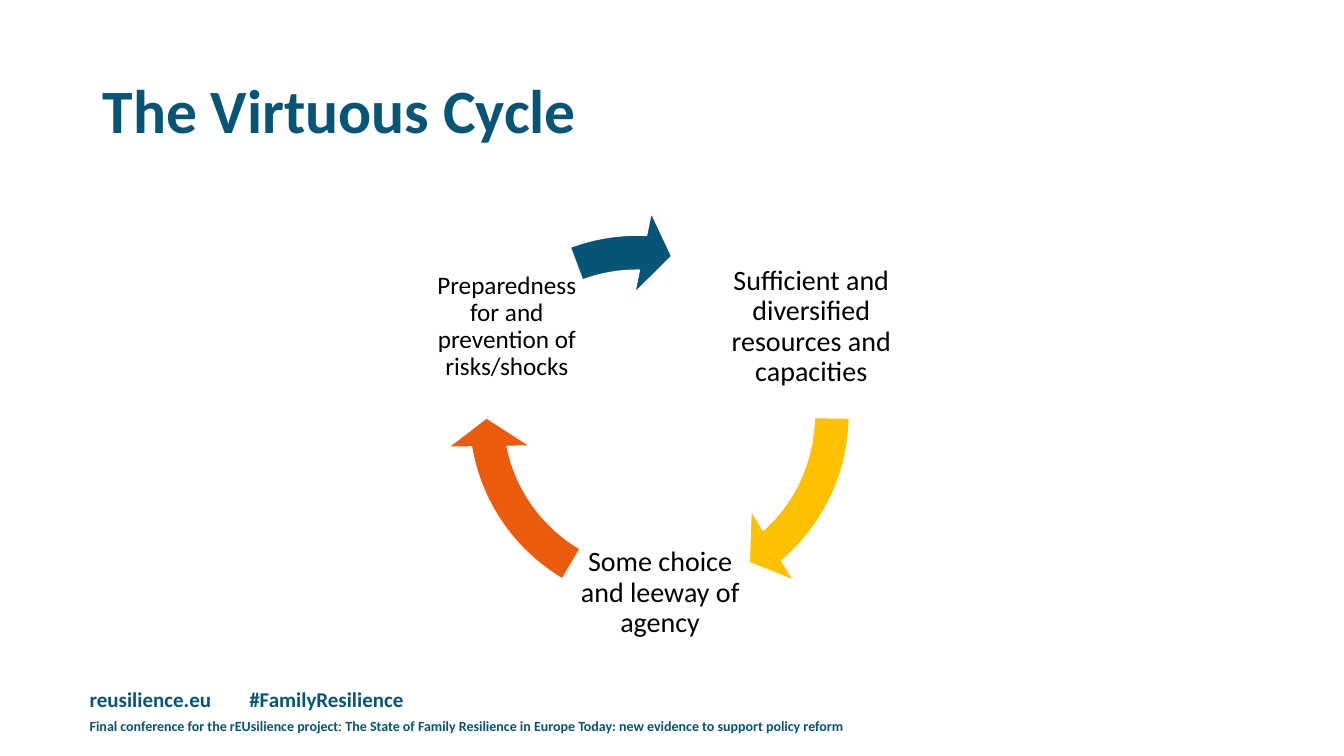
from pptx import Presentation
from pptx import util as u
from pptx.dml.color import RGBColor
from pptx.enum import shapes, text
from pptx.oxml import parse_xml
from pptx.oxml.ns import nsdecls

TEAL = RGBColor(0x06, 0x55, 0x76)
YELLOW = RGBColor(0xFF, 0xC0, 0x00)
ORANGE = RGBColor(0xEA, 0x5B, 0x0C)
BLACK = RGBColor(0, 0, 0)
WHITE = RGBColor(0xFF, 0xFF, 0xFF)

RING_SIZE = 305.3
NODE_INSET = 4

# Words, left, width, top, text size
NODES = [
    ("Sufficient and diversified resources and capacities", 496, 167, 169, 20),
    ("Some choice and leeway of agency", 407, 129, 359, 20),
    ("Preparedness for and prevention of risks/shocks", 297.5, 129, 169, 18),
]

# Colour, left, top, end angle, start angle (angles in units of 100000 / 60000 degrees)
ARROWS = [
    (YELLOW, 318.2, 144, 29.37, 0.52),
    (ORANGE, 318.2, 144, 101.72, 72.34),
    (TEAL, 302.4, 151.2, 163.19, 149.67),
]


def add_text_box(slide, left, top, width, height, anchor=text.MSO_ANCHOR.TOP):
    box = slide.shapes.add_textbox(u.Pt(left), u.Pt(top), u.Pt(width), u.Pt(height))
    frame = box.text_frame
    frame.word_wrap = True
    frame.vertical_anchor = anchor
    return frame


def add_run(paragraph, words, size, color=TEAL, bold=True, font="Calibri"):
    run = paragraph.add_run()
    run.text = words
    run.font.name = font
    run.font.size = u.Pt(size)
    run.font.bold = bold
    run.font.color.rgb = color


def add_tab_stop(paragraph, position):
    paragraph._p.get_or_add_pPr().append(parse_xml(
        f'<a:tabLst {nsdecls("a")}><a:tab pos="{u.Pt(position)}" algn="l"/></a:tabLst>'))


def add_title(slide, words):
    frame = add_text_box(slide, 66.2, 28.8, 828, 104.4, text.MSO_ANCHOR.MIDDLE)
    paragraph = frame.paragraphs[0]
    paragraph.line_spacing = 0.9
    add_run(paragraph, words, 44)


def add_footer(slide):
    # Web address and hashtag
    contact = add_text_box(slide, 57, 486.7, 302.4, 44.6).paragraphs[0]
    add_tab_stop(contact, 114)
    add_run(contact, "reusilience.eu\t#FamilyResilience", 15)

    # Conference line
    conference = add_text_box(slide, 57, 509, 568.8, 19.4).paragraphs[0]
    add_run(conference, "Final conference for the rEUsilience project", 10)
    add_run(conference, ": ", 10, BLACK, False, "Times New Roman")
    add_run(conference, "The State of Family Resilience in Europe Today: "
                        "new evidence to support policy reform", 10)


def add_node(slide, words, left, width, top, size):
    frame = add_text_box(slide, left, top, width, 129, text.MSO_ANCHOR.MIDDLE)
    frame.margin_left = frame.margin_right = u.Pt(NODE_INSET)
    frame.margin_top = frame.margin_bottom = u.Pt(NODE_INSET)
    paragraph = frame.paragraphs[0]
    paragraph.alignment = text.PP_ALIGN.CENTER
    paragraph.line_spacing = 0.9
    add_run(paragraph, words, size, BLACK, False)


def add_cycle_arrow(slide, color, left, top, end, start):
    arrow = slide.shapes.add_shape(
        shapes.MSO_SHAPE.CIRCULAR_ARROW,
        u.Pt(left), u.Pt(top), u.Pt(RING_SIZE), u.Pt(RING_SIZE))
    for index, value in enumerate((0.082, 5.76, end, start, 0.096)):
        arrow.adjustments[index] = value
    arrow.shadow.inherit = False
    arrow.fill.solid()
    arrow.fill.fore_color.rgb = color
    arrow.line.color.rgb = WHITE
    arrow.line.width = u.Pt(1)


def main():
    presentation = Presentation()
    presentation.slide_width = u.Pt(960)
    presentation.slide_height = u.Pt(540)
    slide = presentation.slides.add_slide(presentation.slide_layouts[6])

    add_footer(slide)
    add_title(slide, "The Virtuous Cycle")

    # Cycle: each step is followed by its arrow
    for node, arrow in zip(NODES, ARROWS):
        add_node(slide, *node)
        add_cycle_arrow(slide, *arrow)

    presentation.save("out.pptx")


if __name__ == "__main__":
    main()
